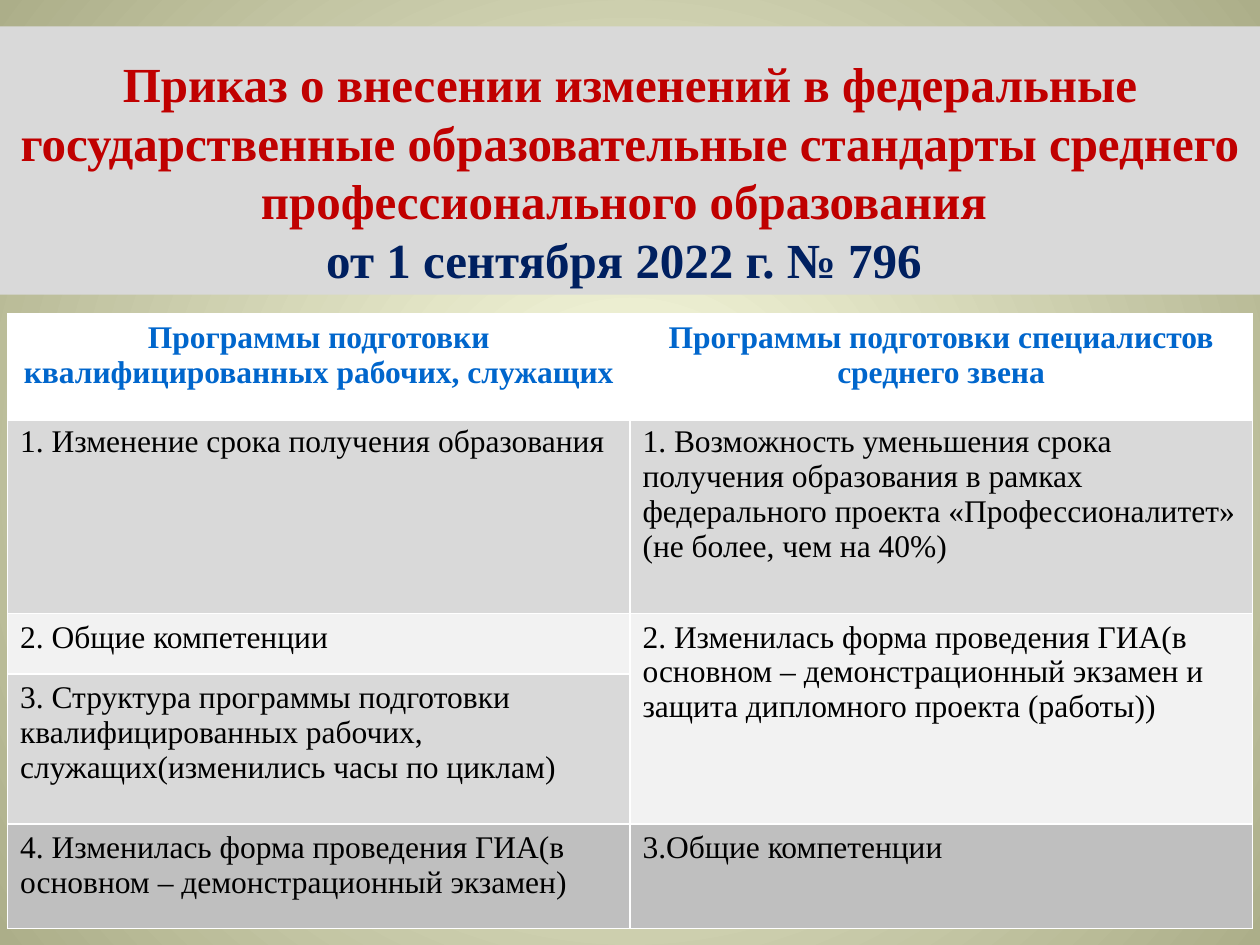
import pptx
import pptx.util
import pptx.dml.color
import pptx.enum.shapes
import pptx.enum.text
import lxml.etree

Inches, Pt = pptx.util.Inches, pptx.util.Pt
RGBColor = pptx.dml.color.RGBColor
ALIGN = pptx.enum.text.PP_ALIGN
ANCHOR = pptx.enum.text.MSO_ANCHOR

FONT = "Times New Roman"
RED, NAVY, BLUE = RGBColor(0xC0, 0, 0), RGBColor(0, 0x20, 0x60), RGBColor(0, 0x66, 0xCC)
BLACK, WHITE = RGBColor(0, 0, 0), RGBColor(255, 255, 255)
PALE, LIGHT, GREY = RGBColor(0xF2, 0xF2, 0xF2), RGBColor(0xD9, 0xD9, 0xD9), RGBColor(0xBF, 0xBF, 0xBF)
GLOW, OLIVE = RGBColor(0xFC, 0xFE, 0xE3), RGBColor(0xAC, 0xAE, 0x89)

WIDTH, HEIGHT = 10, 7.5
TITLE = [
    ("Приказ о внесении изменений в федеральные государственные образовательные "
     "стандарты среднего профессионального образования \v", RED),
    ("от 1 сентября 2022 г. № 796 ", NAVY),
]
# Row height, fill, left cell, right cell (None continues the cell above)
ROWS = [
    (0.83, WHITE, "Программы подготовки квалифицированных рабочих, служащих",
     "Программы подготовки специалистов среднего звена"),
    (1.55, LIGHT, "1. Изменение срока получения образования",
     "1. Возможность уменьшения срока получения образования в рамках федерального "
     "проекта «Профессионалитет» (не более, чем на 40%)"),
    (0.48, PALE, "2. Общие компетенции",
     "2. Изменилась форма проведения ГИА(в основном – демонстрационный экзамен "
     "и защита дипломного проекта (работы))"),
    (1.19, LIGHT, "3. Структура программы подготовки квалифицированных рабочих, "
     "служащих(изменились часы по циклам)", None),
    (0.83, GREY, "4. Изменилась форма проведения ГИА(в основном – демонстрационный экзамен)",
     "3.Общие компетенции"),
]


def write(frame, spans, size, bold=False, align=ALIGN.LEFT, spacing=None):
    """Fill the first paragraph with (text, colour) spans; \\v breaks the line."""
    para = frame.paragraphs[0]
    para.alignment = align
    para.line_spacing = spacing
    for text, color in spans:
        span = para.add_run()
        span.text = text.rstrip("\v")
        span.font.name, span.font.size, span.font.bold = FONT, Pt(size), bold
        span.font.color.rgb = color
        if text.endswith("\v"):
            para.add_line_break()


def paint_background(page):
    fill = page.background.fill
    fill.gradient()
    for stop, color in zip(fill.gradient_stops, (GLOW, OLIVE)):
        stop.color.rgb = color
    for stop, position in zip(fill.gradient_stops, (0, 1)):
        stop.position = position
    namespace = pptx.oxml.ns.qn
    linear = next(page.background._cSld.iter(namespace("a:lin")))
    circle = lxml.etree.Element(namespace("a:path"), path="circle")
    lxml.etree.SubElement(circle, namespace("a:fillToRect"),
                          {side: "50000" for side in "ltrb"})
    linear.getparent().replace(linear, circle)


def draw_borders(cell, bottom):
    """White lines round the cell; they must precede the fill in tcPr."""
    properties = cell._tc.get_or_add_tcPr()
    for index, (side, width) in enumerate(zip("LRTB", (1, 1, 1, bottom))):
        line = pptx.oxml.parse_xml(
            f'<a:ln{side} {pptx.oxml.ns.nsdecls("a")} w="{Pt(width)}"><a:solidFill>'
            f'<a:srgbClr val="{WHITE}"/></a:solidFill></a:ln{side}>')
        properties.insert(index, line)


def add_title(page):
    box = page.shapes.add_shape(pptx.enum.shapes.MSO_SHAPE.RECTANGLE,
                                0, Inches(0.21), Inches(WIDTH), Inches(2.13))
    box.shadow.inherit = False
    box.fill.solid()
    box.fill.fore_color.rgb = LIGHT
    box.line.fill.background()
    frame = box.text_frame
    frame.word_wrap = True
    frame.vertical_anchor = ANCHOR.BOTTOM
    write(frame, TITLE, size=28, bold=True, align=ALIGN.CENTER)


def add_programs(page):
    margin = 0.06
    table_width = WIDTH - 2 * margin
    table = page.shapes.add_table(
        len(ROWS), 2, Inches(margin), Inches(2.49),
        Inches(table_width), Inches(sum(row[0] for row in ROWS))).table
    for column in table.columns:
        column.width = Inches(table_width / 2)
    for index, (height, color, *texts) in enumerate(ROWS):
        table.rows[index].height = Inches(height)
        header = index == 0
        for side, text in enumerate(texts):
            cell = table.cell(index, side)
            cell.fill.solid()
            cell.fill.fore_color.rgb = color
            draw_borders(cell, bottom=3 if header else 1)
            if text is None:
                table.cell(index - 1, side).merge(cell)
            else:
                write(cell.text_frame, [(text, BLUE if header else BLACK)], size=18,
                      bold=header, align=ALIGN.CENTER if header else ALIGN.LEFT)


def main():
    deck = pptx.Presentation()
    deck.slide_width, deck.slide_height = Inches(WIDTH), Inches(HEIGHT)
    page = deck.slides.add_slide(deck.slide_layouts[6])
    paint_background(page)
    add_title(page)
    add_programs(page)
    deck.save("out.pptx")


if __name__ == "__main__":
    main()
